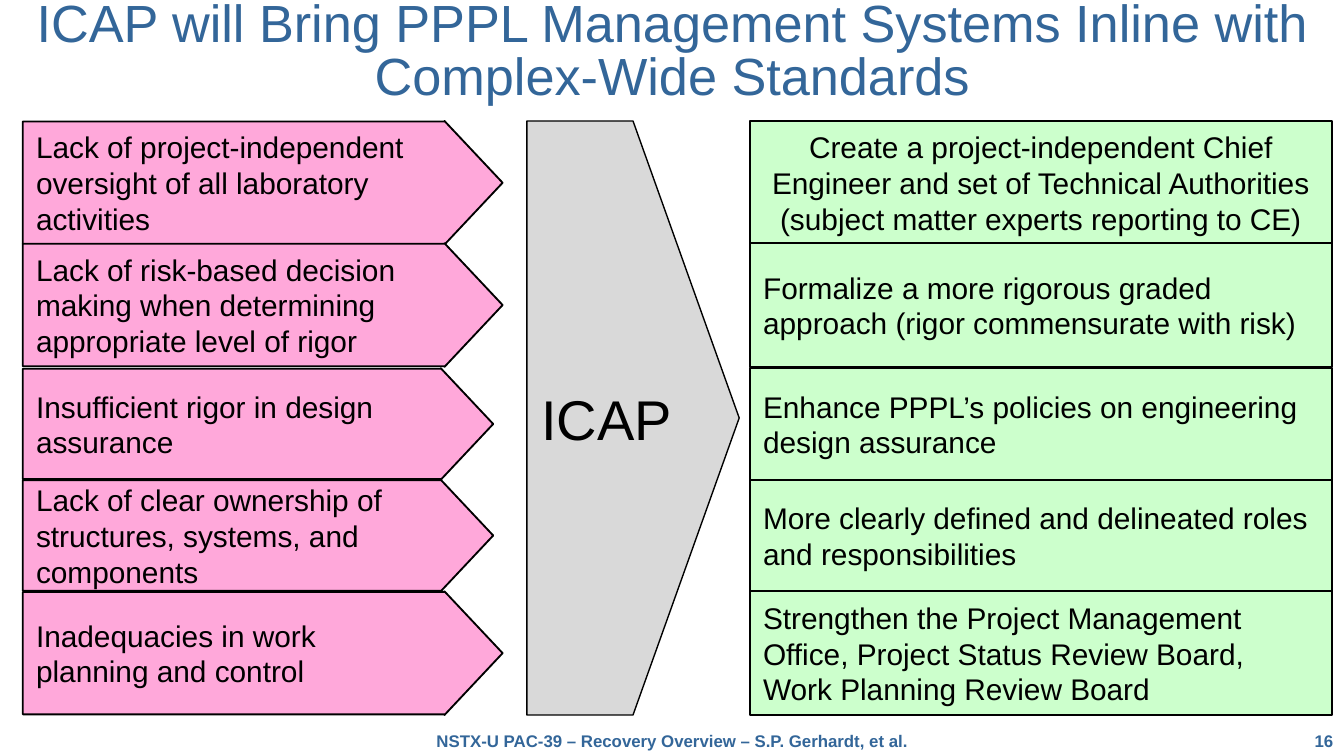
from pptx import Presentation
from pptx.dml.color import RGBColor
from pptx.enum import shapes, text
from pptx.util import Inches, Pt

COLORS = {
    "title": "336699",
    "ink": "000000",
    "problem": "FFA8DA",
    "solution": "CCFFCC",
    "plan": "D9D9D9",
}
LEFT, CENTER, RIGHT = text.PP_ALIGN.LEFT, text.PP_ALIGN.CENTER, text.PP_ALIGN.RIGHT
TALL_ROW = (0.92, 3.57)
SHORT_ROW = (0.83, 3.5)
ROWS = [
    (0.9, TALL_ROW, CENTER,
     "Lack of project-independent oversight of all laboratory activities",
     "Create a project-independent Chief Engineer and set of Technical Authorities "
     "(subject matter experts reporting to CE)"),
    (1.81, TALL_ROW, LEFT,
     "Lack of risk-based decision making when determining appropriate level of rigor",
     "Formalize a more rigorous graded approach (rigor commensurate with risk)"),
    (2.74, SHORT_ROW, LEFT,
     "Insufficient rigor in design assurance",
     "Enhance PPPL’s policies on engineering design assurance"),
    (3.57, SHORT_ROW, LEFT,
     "Lack of clear ownership of structures, systems, and components",
     "More clearly defined and delineated roles and responsibilities"),
    (4.4, TALL_ROW, LEFT,
     "Inadequacies in work planning and control",
     "Strengthen the Project Management Office, Project Status Review Board, "
     "Work Planning Review Board"),
]


def color(name):
    return RGBColor.from_string(COLORS[name])


def write(frame, words, size, ink, alignment, margins, bold=False):
    frame.word_wrap = True
    frame.auto_size = text.MSO_AUTO_SIZE.NONE
    frame.margin_left = frame.margin_right = Inches(margins[0])
    frame.margin_top = frame.margin_bottom = Inches(margins[1])
    paragraph = frame.paragraphs[0]
    paragraph.alignment = alignment
    run = paragraph.add_run()
    run.text = words
    run.font.name = "Arial"
    run.font.size = Pt(size)
    run.font.bold = bold
    run.font.color.rgb = color(ink)
    return paragraph


def add_title(slide, words):
    title = slide.shapes.title
    title.left, title.top, title.width, title.height = map(Inches, (0, 0, 10, 0.79))
    title.text_frame.vertical_anchor = text.MSO_ANCHOR.MIDDLE
    paragraph = write(title.text_frame, words, 28, "title", CENTER, (0.05, 0.05))
    paragraph.line_spacing = 0.85


def add_footer(slide, left, width, words, alignment):
    box = slide.shapes.add_textbox(*map(Inches, (left, 5.4, width, 0.23)))
    write(box.text_frame, words, 9, "title", alignment, (0, 0.04), bold=True)


def add_block(slide, kind, place, fill, words, size=16, alignment=LEFT, line=1):
    shape = slide.shapes.add_shape(kind, *map(Inches, place))
    shape.shadow.inherit = False
    shape.fill.solid()
    shape.fill.fore_color.rgb = color(fill)
    shape.line.color.rgb = color("ink")
    shape.line.width = Pt(line)
    shape.text_frame.vertical_anchor = text.MSO_ANCHOR.MIDDLE
    write(shape.text_frame, words, size, "ink", alignment, (0.1, 0.05))
    return shape


def add_row(slide, top, row_size, alignment, problem, solution):
    height, arrow_width = row_size
    arrow = add_block(slide, shapes.MSO_SHAPE.RIGHT_ARROW,
                      (0.17, top, arrow_width, height), "problem", problem)
    arrow.adjustments[0] = 0.99
    arrow.adjustments[1] = 0.47
    add_block(slide, shapes.MSO_SHAPE.RECTANGLE, (5.58, top, 4.33, height),
              "solution", solution, alignment=alignment)


def main():
    presentation = Presentation()
    presentation.slide_width = Inches(10)
    presentation.slide_height = Inches(10 * 9 / 16)
    slide = presentation.slides.add_slide(presentation.slide_layouts[5])
    add_footer(slide, 9.25, 0.67, "16", RIGHT)
    add_footer(slide, 1, 8, "NSTX-U PAC-39 – Recovery Overview – S.P. Gerhardt, et al.", CENTER)
    add_title(slide, "ICAP will Bring PPPL Management Systems Inline with Complex-Wide Standards")
    for row in ROWS:
        add_row(slide, *row)
    add_block(slide, shapes.MSO_SHAPE.PENTAGON, (3.92, 0.9, 1.58, 4.42), "plan",
              "ICAP", size=30, alignment=CENTER, line=0.75)
    presentation.save("out.pptx")


if __name__ == "__main__":
    main()
